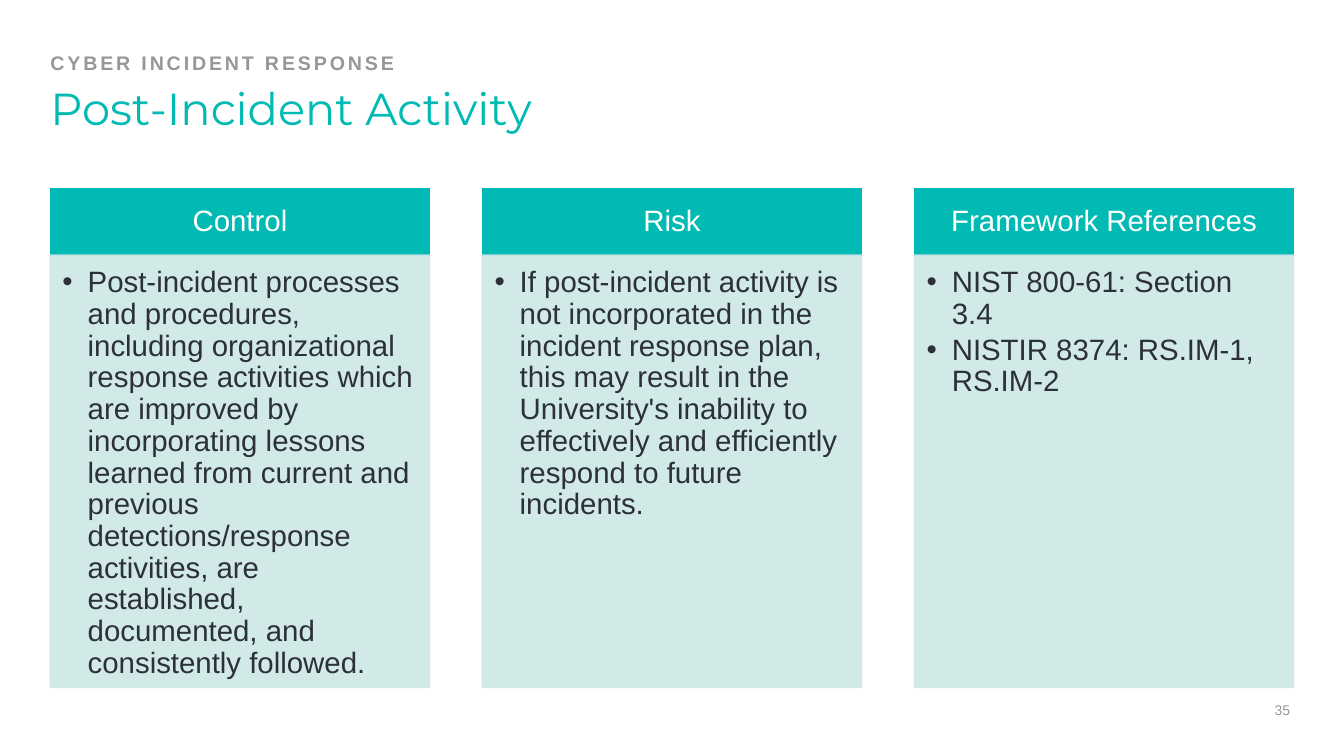
from lxml.etree import SubElement
from pptx import Presentation
from pptx.dml.color import RGBColor
from pptx.enum.shapes import MSO_SHAPE
from pptx.enum.text import MSO_ANCHOR, PP_ALIGN
from pptx.oxml.ns import qn
from pptx.util import Inches, Pt

COLORS = {"teal": "00BAB3", "pale": "CCE7E5", "ink": "2B303A", "gray": "979797", "white": "FFFFFF"}
COLUMNS = [
    ("Control", [
        "Post-incident processes and procedures, including organizational response activities "
        "which are improved by incorporating lessons learned from current and previous "
        "detections/response activities, are established, documented, and consistently followed.",
    ]),
    ("Risk", [
        "If post-incident activity is not incorporated in the incident response plan, this may "
        "result in the University's inability to effectively and efficiently respond to future incidents.",
    ]),
    ("Framework References", ["NIST 800-61: Section 3.4", "NISTIR 8374: RS.IM-1, RS.IM-2"]),
]
LEFT, COLUMN_WIDTH, COLUMN_STEP = 0.5, 3.76, 4.285
HEADER_TOP, HEADER_HEIGHT, BODY_HEIGHT = 1.87, 0.66, 4.29


def set_frame(shape, anchor, margins):
    frame = shape.text_frame
    frame.word_wrap = True
    frame.vertical_anchor = anchor
    frame.margin_left, frame.margin_top, frame.margin_right, frame.margin_bottom = map(Inches, margins)
    return frame


def style(paragraph, size, color, font="Arial", align=PP_ALIGN.LEFT):
    paragraph.alignment = align
    paragraph.line_spacing = 0.9
    for run in paragraph.runs:
        run.font.name = font
        run.font.size = Pt(size)
        run.font.color.rgb = RGBColor.from_string(COLORS[color])


prs = Presentation()
prs.slide_width, prs.slide_height = Inches(13.33), Inches(7.5)
slide = prs.slides.add_slide(prs.slide_layouts[5])

title = slide.shapes.title
title.left, title.top, title.width, title.height = map(Inches, (LEFT, 0.76, 12.33, 0.59))
title_frame = set_frame(title, MSO_ANCHOR.TOP, (0, 0.1, 0, 0))
title_frame.text = "Post-Incident Activity"
style(title_frame.paragraphs[0], 32, "teal", "Montserrat")

section = slide.shapes.add_textbox(*map(Inches, (LEFT, 0.53, 12.33, 0.21)))
section_frame = set_frame(section, MSO_ANCHOR.BOTTOM, (0, 0, 0, 0))
section_frame.text = "CYBER INCIDENT RESPONSE"
style(section_frame.paragraphs[0], 14, "gray")
section_font = section_frame.paragraphs[0].runs[0].font
section_font.bold = True
section_frame.paragraphs[0].runs[0]._r.get_or_add_rPr().set("spc", "200")

for index, (heading, points) in enumerate(COLUMNS):
    left = LEFT + index * COLUMN_STEP
    header = slide.shapes.add_shape(
        MSO_SHAPE.RECTANGLE, *map(Inches, (left, HEADER_TOP, COLUMN_WIDTH, HEADER_HEIGHT)))
    body = slide.shapes.add_shape(
        MSO_SHAPE.RECTANGLE, *map(Inches, (left, HEADER_TOP + HEADER_HEIGHT, COLUMN_WIDTH, BODY_HEIGHT)))
    for panel, color in ((header, "teal"), (body, "pale")):
        panel.shadow.inherit = False
        panel.fill.solid()
        panel.line.width = Pt(1)
        for paint in (panel.fill.fore_color, panel.line.color):
            paint.rgb = RGBColor.from_string(COLORS[color])
    for swatch in list(body._element.spPr.iter(qn("a:srgbClr"))):
        SubElement(swatch, qn("a:alpha"), val="90000")

    header_frame = set_frame(header, MSO_ANCHOR.MIDDLE, (0.16, 0.09, 0.16, 0.09))
    header_frame.text = heading
    style(header_frame.paragraphs[0], 21, "white", align=PP_ALIGN.CENTER)

    body_frame = set_frame(body, MSO_ANCHOR.TOP, (0.12, 0.12, 0.16, 0.18))
    body_frame.text = "\n".join(points)
    for paragraph in body_frame.paragraphs:
        style(paragraph, 21, "ink")
        paragraph.space_after = Pt(3)
        properties = paragraph._p.get_or_add_pPr()
        properties.set("marL", str(Inches(0.25)))
        properties.set("indent", str(-Inches(0.25)))
        SubElement(properties, qn("a:buFont"), typeface="Arial")
        SubElement(properties, qn("a:buChar"), char="•")

number = slide.shapes.add_textbox(*map(Inches, (12.52, 6.97, 0.4, 0.17)))
number_frame = set_frame(number, MSO_ANCHOR.MIDDLE, (0, 0, 0, 0))
number_frame.text = "35"
style(number_frame.paragraphs[0], 10, "gray", align=PP_ALIGN.CENTER)

prs.save("out.pptx")
